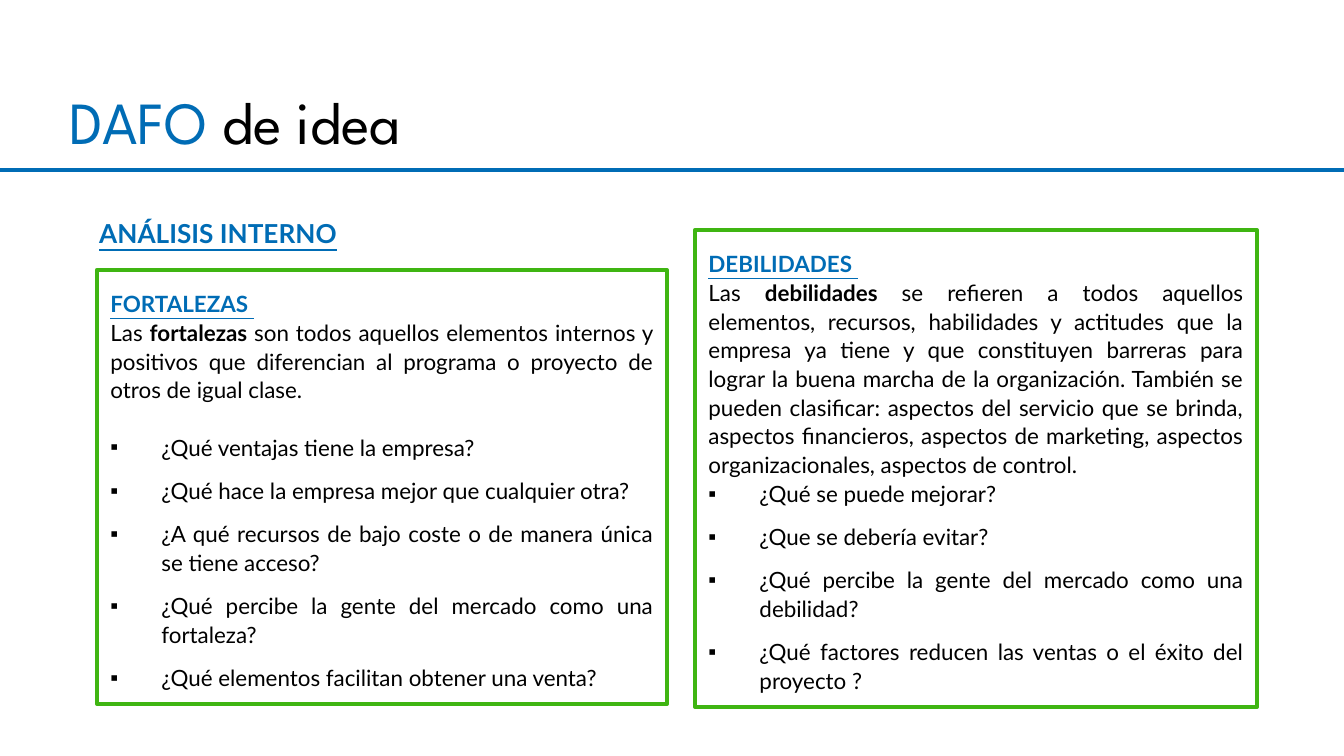
from lxml.etree import SubElement
from pptx import Presentation
from pptx.dml.color import RGBColor
from pptx.enum.shapes import MSO_CONNECTOR
from pptx.enum.text import MSO_ANCHOR, MSO_AUTO_SIZE, PP_ALIGN
from pptx.oxml.ns import qn
from pptx.util import Pt

# Content
BLUE, GREEN, BLACK = "006CB5", "3FB512", "000000"
TITLE = [("DAFO ", BLUE), ("de idea", BLACK)]
SECTION = "ANÁLISIS INTERNO"
PANELS = [
    {
        "place": (97, 270, 570, 434),
        "heading": "FORTALEZAS ",
        "align": PP_ALIGN.LEFT,
        "intro": ("Las ", "fortalezas ",
                  "son todos aquellos elementos internos y positivos que "
                  "diferencian al programa o proyecto de otros de igual clase."),
        "first_gap": 15.4,
        "gap": 7.8,
        "questions": [
            "¿Qué ventajas tiene la empresa?",
            "¿Qué hace la empresa mejor que cualquier otra?",
            "¿A qué recursos de bajo coste o de manera única se tiene acceso?",
            "¿Qué percibe la gente del mercado como una fortaleza?",
            "¿Qué elementos facilitan obtener una venta?",
        ],
    },
    {
        "place": (695, 230, 562, 477),
        "heading": "DEBILIDADES ",
        "align": PP_ALIGN.JUSTIFY,
        "intro": ("Las ", "debilidades ",
                  "se refieren a todos aquellos elementos, recursos, habilidades "
                  "y actitudes que la empresa ya tiene y que constituyen barreras "
                  "para lograr la buena marcha de la organización. También se "
                  "pueden clasificar: aspectos del servicio que se brinda, "
                  "aspectos financieros, aspectos de marketing, aspectos "
                  "organizacionales, aspectos de control."),
        "first_gap": 0,
        "gap": 7.7,
        "questions": [
            "¿Qué se puede mejorar?",
            "¿Que se debería evitar?",
            "¿Qué percibe la gente del mercado como una debilidad?",
            "¿Qué factores reducen las ventas o el éxito del proyecto ?",
        ],
    },
]


def px(value):
    return round(value * 914400 / 134.4)


def colour(text):
    return RGBColor.from_string(text)


def setup(shape, place, anchor=MSO_ANCHOR.TOP):
    shape.left, shape.top, shape.width, shape.height = map(px, place)
    frame = shape.text_frame
    frame.word_wrap = True
    frame.auto_size = MSO_AUTO_SIZE.NONE
    frame.vertical_anchor = anchor
    return frame


def add_span(para, text, size, hue, font="Lato", bold=False, underline=False):
    span = para.add_run()
    span.text = text
    span.font.name, span.font.size = font, Pt(size)
    span.font.bold, span.font.underline = bold, underline
    span.font.color.rgb = colour(hue)


def set_para(para, align, spacing, before=0, bullet=None):
    indent = px(51) if bullet else 0
    props = para._p.get_or_add_pPr()
    props.set("marL", str(indent))
    props.set("indent", str(-indent))
    if bullet:
        bullet_colour = SubElement(props, qn("a:buClr"))
        SubElement(bullet_colour, qn("a:srgbClr"), val=BLACK)
        SubElement(props, qn("a:buChar"), char=bullet)
    else:
        SubElement(props, qn("a:buNone"))
    para.alignment, para.line_spacing = align, spacing
    para.space_before, para.space_after = Pt(before), Pt(0)


def fill_panel(box, panel):
    frame = setup(box, panel["place"])
    box.line.color.rgb = colour(GREEN)
    box.line.width = Pt(2.25)

    heading = frame.paragraphs[0]
    set_para(heading, panel["align"], 1.5)
    add_span(heading, panel["heading"], 12, BLUE, bold=True, underline=True)

    intro = frame.add_paragraph()
    set_para(intro, PP_ALIGN.JUSTIFY, 1.07)
    for number, text in enumerate(panel["intro"]):
        add_span(intro, text, 12, BLACK, bold=number == 1)

    for number, question in enumerate(panel["questions"]):
        para = frame.add_paragraph()
        before = panel["gap"] if number else panel["first_gap"]
        set_para(para, PP_ALIGN.JUSTIFY, 1.07, before, "▪")
        add_span(para, question, 12, BLACK)


deck = Presentation()
deck.slide_width, deck.slide_height = px(1344), px(756)
page = deck.slides.add_slide(deck.slide_layouts.get_by_name("Two Content"))
title, *bodies = list(page.placeholders)[:3]
for extra in list(page.placeholders)[3:]:
    extra._element.getparent().remove(extra._element)

# Title and the rule under it
para = setup(title, (56, 60, 653, 122), MSO_ANCHOR.MIDDLE).paragraphs[0]
para.alignment = PP_ALIGN.LEFT
for text, hue in TITLE:
    add_span(para, text, 32, hue, "League Spartan")
rule = page.shapes.add_connector(MSO_CONNECTOR.STRAIGHT, 0, px(170), px(1344), px(170))
rule.line.color.rgb = colour(BLUE)
rule.line.width = Pt(2)
SubElement(rule._element.spPr, qn("a:effectLst"))

# Section label
label = page.shapes.add_textbox(0, 0, 0, 0)
para = setup(label, (86, 214, 353, 55)).paragraphs[0]
set_para(para, PP_ALIGN.LEFT, 0.9)
add_span(para, SECTION, 14, BLUE, bold=True, underline=True)

# Panels
for box, panel in zip(bodies, PANELS):
    fill_panel(box, panel)

deck.save("out.pptx")
